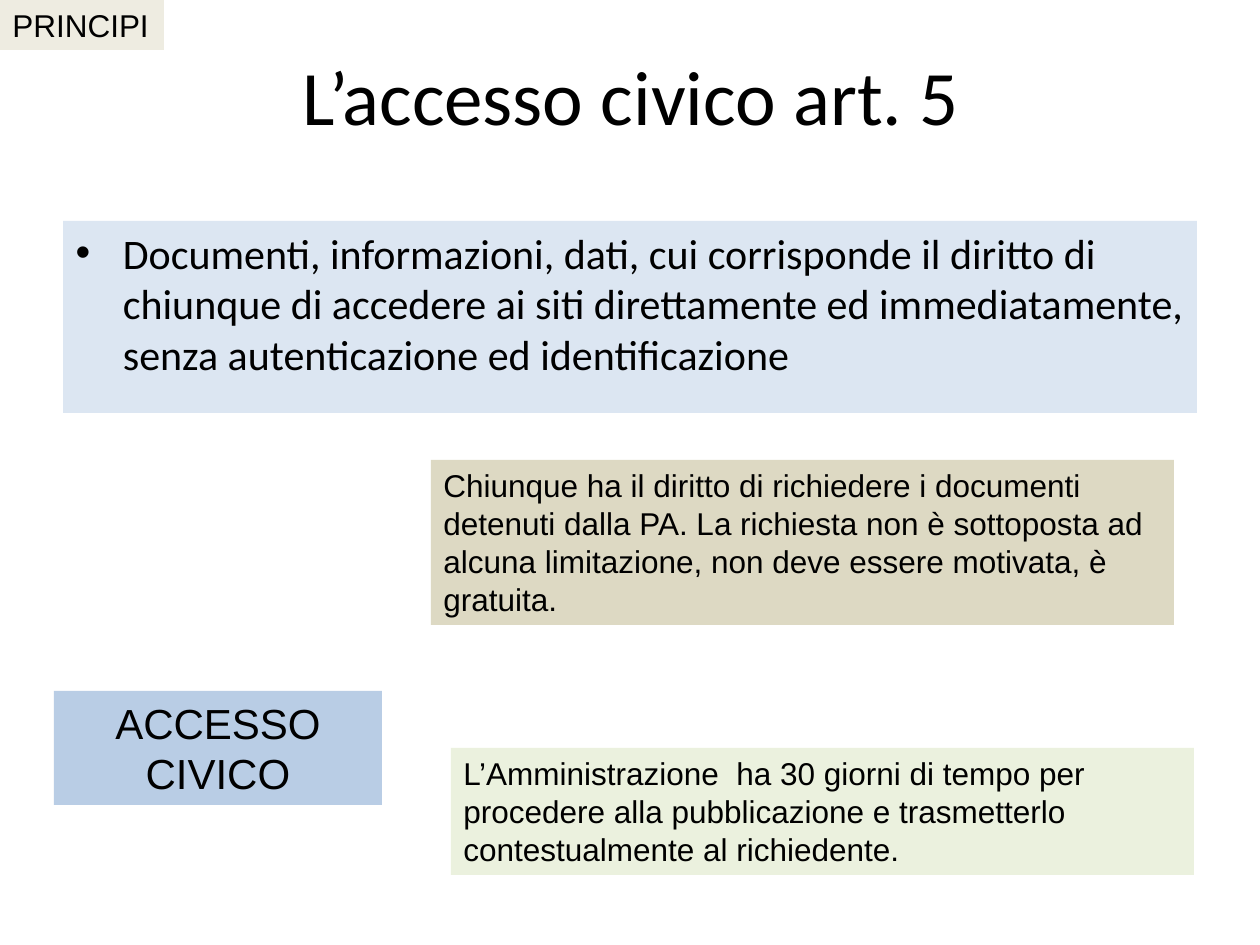
from pptx import Presentation, util as u
from pptx.dml.color import RGBColor
from pptx.enum import text as t

# Content
HEX = {"ink": "000000", "pale": "DCE6F2", "blue": "B9CDE5",
       "tan": "DDD9C3", "green": "EBF1DE", "cream": "EEECE1"}
TITLE = "L’accesso civico art. 5"
BODY = ("Documenti, informazioni, dati, cui corrisponde il diritto di chiunque "
        "di accedere ai siti direttamente ed immediatamente, senza "
        "autenticazione ed identificazione")
# text, box in px, fill, size, alignment
NOTES = [
    ("ACCESSO CIVICO", (54, 691, 328, 114), "blue", 24, "CENTER"),
    ("Chiunque ha il diritto di richiedere i documenti detenuti dalla PA. "
     "La richiesta non è sottoposta ad alcuna limitazione, non deve essere "
     "motivata, è gratuita.", (431, 460, 743, 165), "tan", 18, "LEFT"),
    ("L’Amministrazione  ha 30 giorni di tempo per procedere alla "
     "pubblicazione e trasmetterlo contestualmente al richiedente.",
     (451, 748, 743, 127), "green", 18, "LEFT"),
    ("PRINCIPI", (0, 0, 164, 50), "cream", 18, "LEFT"),
]
PX = u.Inches(1) / 126


def place(shape, box):
    shape.left, shape.top, shape.width, shape.height = (round(v * PX) for v in box)


def paint(shape, name):
    shape.fill.solid()
    shape.fill.fore_color.rgb = RGBColor.from_string(HEX[name])


def write(shape, words, size, font, align):
    frame = shape.text_frame
    frame.text = words
    frame.word_wrap = True
    para = frame.paragraphs[0]
    para.alignment = getattr(t.PP_ALIGN, align)
    face = para.runs[0].font
    face.size, face.name = u.Pt(size), font
    face.color.rgb = RGBColor.from_string(HEX["ink"])
    return para


deck = Presentation()
deck.slide_width, deck.slide_height = u.Inches(10), u.Inches(7.5)
slide = deck.slides.add_slide(deck.slide_layouts[1])

# Title
title = slide.shapes.title
place(title, (64, 16, 1134, 158))
write(title, TITLE, 44, "Calibri", "CENTER")
title.text_frame.vertical_anchor = t.MSO_ANCHOR.MIDDLE

# Definition, with the template's bullet
body = slide.placeholders[1]
place(body, (63, 221, 1134, 192))
paint(body, "pale")
write(body, BODY, 24, "Calibri", "LEFT")

# Coloured notes
for words, box, fill, size, align in NOTES:
    note = slide.shapes.add_textbox(0, 0, 0, 0)
    place(note, box)
    paint(note, fill)
    write(note, words, size, "Arial", align)
    note.text_frame.auto_size = t.MSO_AUTO_SIZE.SHAPE_TO_FIT_TEXT

deck.save("out.pptx")
